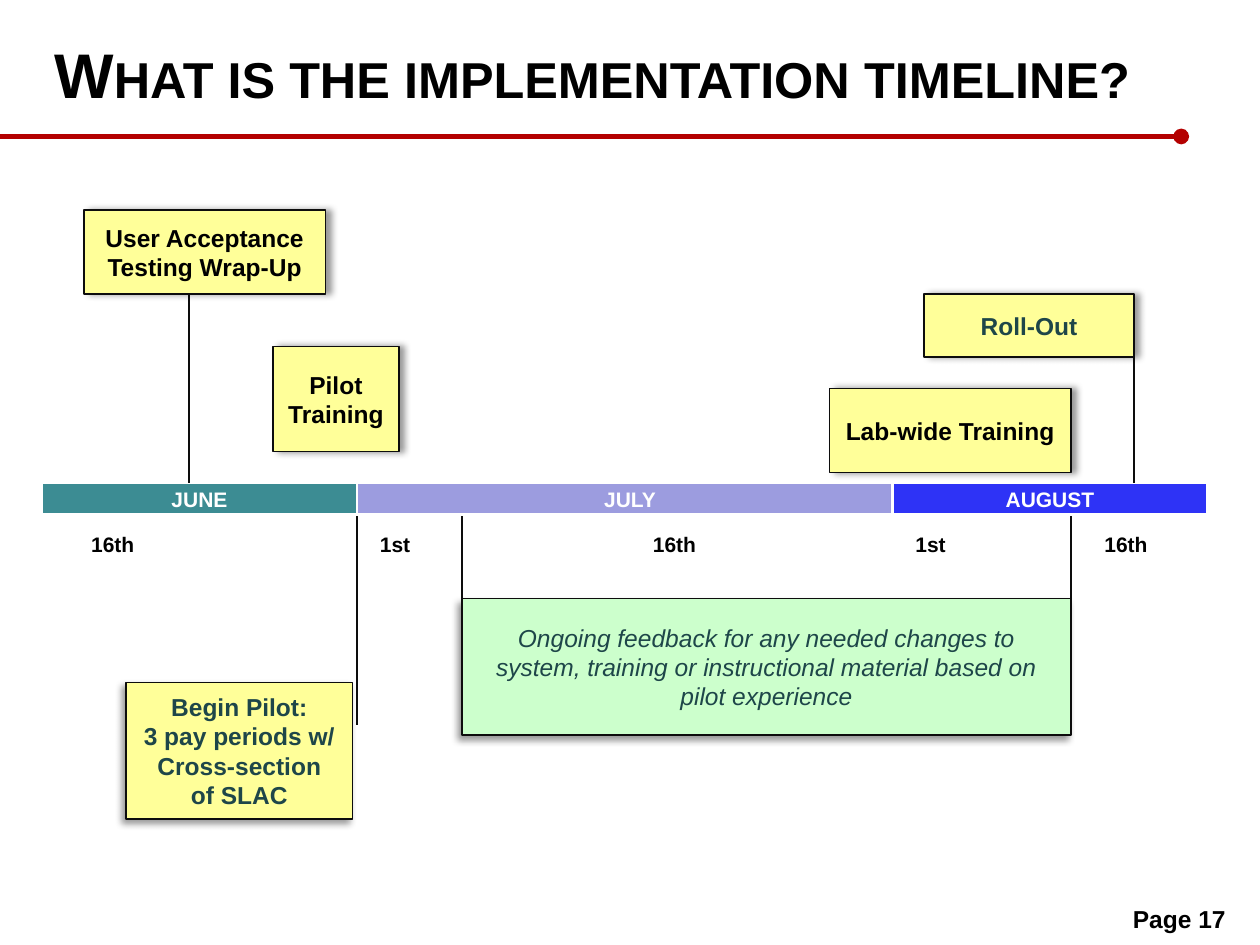
"""Build the implementation timeline slide."""
from lxml import etree
from pptx import Presentation
from pptx.dml.color import RGBColor
from pptx.enum import shapes, text
from pptx.oxml.ns import qn
from pptx.util import Pt

BLACK = RGBColor(0x00, 0x00, 0x00)
WHITE = RGBColor(0xFF, 0xFF, 0xFF)
INK = RGBColor(0x0D, 0x0D, 0x0D)
RED = RGBColor(0xB4, 0x00, 0x00)
YELLOW = RGBColor(0xFF, 0xFF, 0x99)
MINT = RGBColor(0xCC, 0xFF, 0xCC)
SLATE = RGBColor(0x1E, 0x46, 0x49)
TEAL = RGBColor(0x3C, 0x8C, 0x93)
LAVENDER = RGBColor(0x9C, 0x9C, 0xDF)
BLUE = RGBColor(0x2E, 0x33, 0xF6)
LEFT, CENTER, RIGHT = text.PP_ALIGN.LEFT, text.PP_ALIGN.CENTER, text.PP_ALIGN.RIGHT

prs = Presentation()
prs.slide_width, prs.slide_height = Pt(720), Pt(540)
slide = prs.slides.add_slide(prs.slide_layouts[6])


def write(holder, words, size, color, align, anchor=text.MSO_ANCHOR.MIDDLE, italic=False):
    frame = holder.text_frame
    frame.word_wrap = True
    frame.vertical_anchor = anchor
    frame.text = words
    for paragraph in frame.paragraphs:
        paragraph.alignment = align
        for run in paragraph.runs:
            run.font.name = "Arial"
            run.font.size = Pt(size)
            run.font.color.rgb = color
            run.font.bold = not italic
            run.font.italic = italic


def draw_line(x1, y1, x2, y2, color=INK, width=1.5):
    line = slide.shapes.add_connector(
        shapes.MSO_CONNECTOR.STRAIGHT, Pt(x1), Pt(y1), Pt(x2), Pt(y2))
    line.line.color.rgb = color
    line.line.width = Pt(width)
    etree.SubElement(line._element.spPr, qn("a:effectLst"))
    return line


title_rule = draw_line(0, 78, 675, 78, RED, 3)
etree.SubElement(title_rule.line._get_or_add_ln(), qn("a:tailEnd"), type="oval")

for x, top, bottom in [(204, 282, 414), (612, 288, 345), (264, 294, 348)]:
    draw_line(x, top, x, bottom)

title = slide.shapes.add_textbox(Pt(24), Pt(12), Pt(678), Pt(60))
write(title, "What is the implementation timeline?", 36, BLACK, LEFT)
title.text_frame.paragraphs[0].runs[0].font._element.set("cap", "small")

page_number = slide.shapes.add_textbox(Pt(397.5), Pt(497), Pt(310), Pt(37.5))
write(page_number, "Page 17", 14, BLACK, RIGHT, text.MSO_ANCHOR.TOP)
page_number.text_frame.margin_top = Pt(19.7)

for month, left, width, fill in [
    ("JUNE", 24, 180, TEAL),
    ("JULY", 204, 312, LAVENDER),
    ("AUGUST", 510, 180, BLUE),
]:
    bar = slide.shapes.add_shape(
        shapes.MSO_SHAPE.RECTANGLE, Pt(left), Pt(276), Pt(width), Pt(18))
    bar.fill.solid()
    bar.fill.fore_color.rgb = fill
    bar.line.color.rgb = WHITE
    bar.line.width = Pt(1.5)
    bar.shadow.inherit = False
    write(bar, month, 12, WHITE, CENTER)

for day, left in [("16th", 45), ("1st", 210), ("16th", 366), ("1st", 516), ("16th", 624)]:
    date = slide.shapes.add_textbox(Pt(left), Pt(300), Pt(54), Pt(21.6))
    write(date, day, 12, BLACK, LEFT, text.MSO_ANCHOR.TOP)

pilot_start = "Begin Pilot:\n3 pay periods w/\nCross-section\nof SLAC"
feedback = ("Ongoing feedback for any needed changes to system, training or "
            "instructional material based on pilot experience")
for words, left, top, width, height, fill, color, shadow_angle in [
    ("User Acceptance Testing Wrap-Up", 48, 120, 138, 48, YELLOW, BLACK, 0),
    (pilot_start, 72, 390, 129.6, 78, YELLOW, SLATE, 135),
    (feedback, 264, 342, 348, 78, MINT, SLATE, 135),
    ("Roll-Out", 528, 168, 120, 36, YELLOW, SLATE, 0),
    ("Pilot Training", 156, 198, 72, 60, YELLOW, BLACK, 0),
    ("Lab-wide Training", 474, 222, 138, 48, YELLOW, BLACK, 0),
]:
    event = slide.shapes.add_shape(
        shapes.MSO_SHAPE.RECTANGLE, Pt(left), Pt(top), Pt(width), Pt(height))
    event.fill.solid()
    event.fill.fore_color.rgb = fill
    event.line.color.rgb = INK
    event.line.width = Pt(0.75)
    event.shadow.inherit = False
    effects = event._element.spPr.find(qn("a:effectLst"))
    shadow = etree.SubElement(
        effects, qn("a:outerShdw"), blurRad=str(Pt(4)), dist=str(Pt(3)),
        dir=str(shadow_angle * 60000), algn="ctr", rotWithShape="0")
    shade = etree.SubElement(shadow, qn("a:srgbClr"), val="000000")
    etree.SubElement(shade, qn("a:alpha"), val="40000")
    write(event, words, 14, color, CENTER, italic=words == feedback)

for x, top in [(108, 168), (648, 168)]:
    draw_line(x, top, x, 276)

prs.save("out.pptx")
